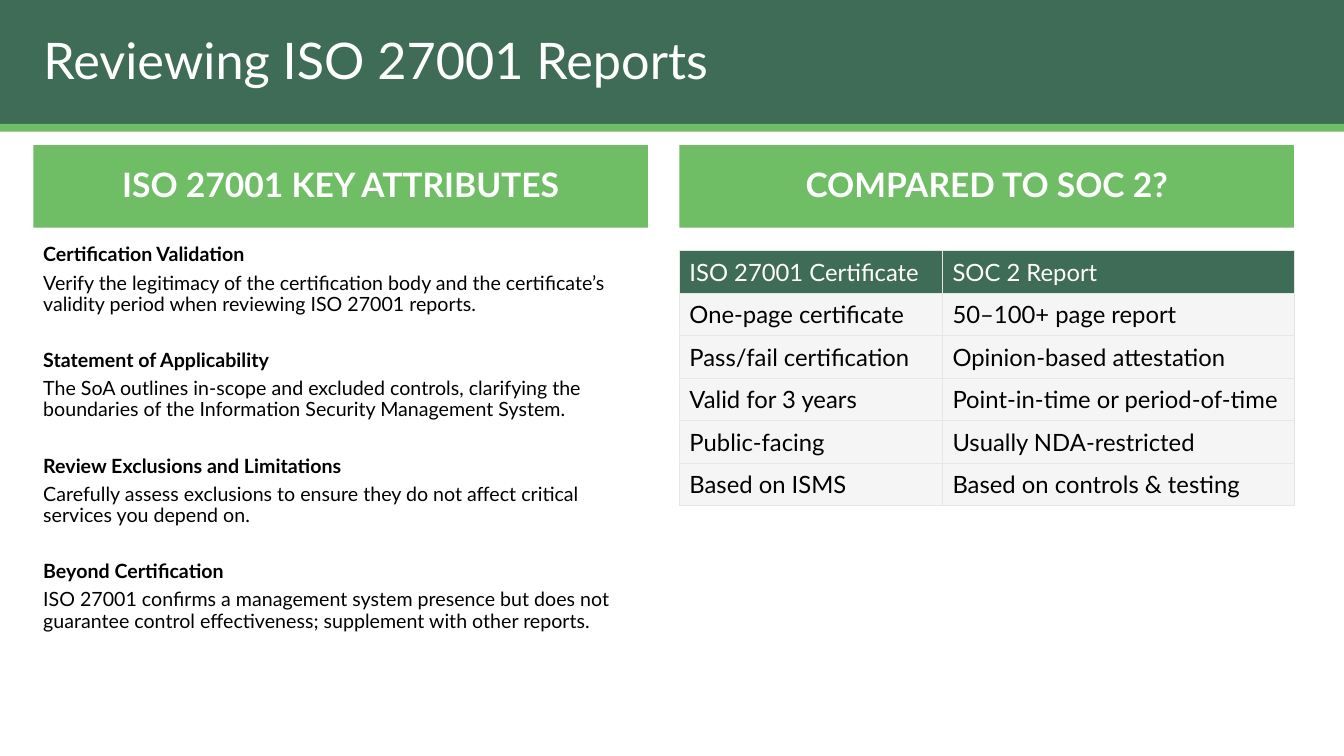
from dataclasses import dataclass
from typing import Any

from pptx import Presentation
from pptx.dml.color import RGBColor
from pptx.enum.shapes import MSO_SHAPE
from pptx.enum.text import MSO_ANCHOR, MSO_AUTO_SIZE, PP_ALIGN
from pptx.oxml import parse_xml
from pptx.oxml.ns import nsdecls
from pptx.util import Cm, Pt

DARK_GREEN = RGBColor(0x3E, 0x6C, 0x57)
LIGHT_GREEN = RGBColor(0x6F, 0xBE, 0x65)
WHITE = RGBColor(0xFF, 0xFF, 0xFF)
BLACK = RGBColor(0x00, 0x00, 0x00)
ROW_GREY = RGBColor(0xF5, 0xF5, 0xF5)
BORDER_GREY = RGBColor(0xE6, 0xE6, 0xE6)

SLIDE_W, SLIDE_H = 33.87, 19.05
LEFT_X, RIGHT_X, COLUMN_W = 0.84, 17.12, 15.49
TABLE_COLUMNS = (6.63, 8.86)
ROW_H = 1.07


@dataclass(frozen=True)
class Bar:
    x: float
    y: float
    w: float
    h: float
    color: RGBColor
    text: str = ""


@dataclass(frozen=True)
class Attribute:
    heading: str
    detail: str


BANDS = (
    Bar(0, 0, SLIDE_W, 3.18, DARK_GREEN),
    Bar(0, 3.12, SLIDE_W, 0.2, LIGHT_GREEN),
)
HEADERS = (
    Bar(LEFT_X, 3.66, COLUMN_W, 2.08, LIGHT_GREEN, "ISO 27001 KEY ATTRIBUTES"),
    Bar(RIGHT_X, 3.66, COLUMN_W, 2.08, LIGHT_GREEN, "COMPARED TO SOC 2?"),
)
ATTRIBUTES = (
    Attribute(
        "Certification Validation",
        "Verify the legitimacy of the certification body and the certificate’s "
        "validity period when reviewing ISO 27001 reports.",
    ),
    Attribute(
        "Statement of Applicability",
        "The SoA outlines in-scope and excluded controls, clarifying the "
        "boundaries of the Information Security Management System.",
    ),
    Attribute(
        "Review Exclusions and Limitations",
        "Carefully assess exclusions to ensure they do not affect critical "
        "services you depend on.",
    ),
    Attribute(
        "Beyond Certification",
        "ISO 27001 confirms a management system presence but does not "
        "guarantee control effectiveness; supplement with other reports.",
    ),
)
COMPARISON = (
    ("ISO 27001 Certificate", "SOC 2 Report"),
    ("One-page certificate", "50–100+ page report"),
    ("Pass/fail certification", "Opinion-based attestation"),
    ("Valid for 3 years", "Point-in-time or period-of-time"),
    ("Public-facing", "Usually NDA-restricted"),
    ("Based on ISMS", "Based on controls & testing"),
)


def set_attrs(target: Any, values: dict[str, Any]) -> None:
    for name, value in values.items():
        setattr(target, name, value)


def write(p: Any, text: str, size: float, color: RGBColor, bold: bool = False,
          **layout: Any) -> None:
    r = p.add_run()
    r.text = text
    set_attrs(r.font, {"name": "Lato", "size": Pt(size), "bold": bold})
    r.font.color.rgb = color
    set_attrs(p, layout)


def add_bar(s: Any, bar: Bar) -> Any:
    sp = s.shapes.add_shape(
        MSO_SHAPE.RECTANGLE, Cm(bar.x), Cm(bar.y), Cm(bar.w), Cm(bar.h))
    sp.shadow.inherit = False
    sp.fill.solid()
    sp.fill.fore_color.rgb = bar.color
    sp.line.fill.background()
    if bar.text:
        tf = sp.text_frame
        set_attrs(tf, {"word_wrap": True, "vertical_anchor": MSO_ANCHOR.MIDDLE})
        write(tf.paragraphs[0], bar.text, 24, WHITE, True,
              alignment=PP_ALIGN.CENTER, line_spacing=0.9)
    return sp


def format_title(title: Any) -> None:
    set_attrs(title, {"left": Cm(LEFT_X), "top": Cm(0.43),
                      "width": Cm(24.66), "height": Cm(2.31)})
    tf = title.text_frame
    set_attrs(tf, {"word_wrap": True, "auto_size": MSO_AUTO_SIZE.NONE,
                   "vertical_anchor": MSO_ANCHOR.MIDDLE})
    write(tf.paragraphs[0], "Reviewing ISO 27001 Reports", 36, WHITE,
          alignment=PP_ALIGN.LEFT, line_spacing=0.9)


def add_attributes(s: Any) -> None:
    sp = s.shapes.add_textbox(Cm(LEFT_X), Cm(6.05), Cm(COLUMN_W), Cm(11.1))
    tf = sp.text_frame
    tf.word_wrap = True
    for i, item in enumerate(ATTRIBUTES):
        p = tf.add_paragraph() if i else tf.paragraphs[0]
        write(p, item.heading, 14, BLACK, True,
              line_spacing=0.9, space_before=Pt(25 if i else 0))
        write(tf.add_paragraph(), item.detail, 14, BLACK,
              line_spacing=0.9, space_before=Pt(5))


def add_borders(cell: Any) -> None:
    tc_pr = cell._tc.get_or_add_tcPr()
    for side in ("lnL", "lnR", "lnT", "lnB"):
        tc_pr.append(parse_xml(
            f'<a:{side} {nsdecls("a")} w="{Pt(0.75)}"><a:solidFill>'
            f'<a:srgbClr val="{BORDER_GREY}"/></a:solidFill></a:{side}>'))


def add_comparison(s: Any) -> None:
    table = s.shapes.add_table(
        len(COMPARISON), len(TABLE_COLUMNS), Cm(RIGHT_X), Cm(6.32),
        Cm(COLUMN_W), Cm(ROW_H * len(COMPARISON))).table
    table.horz_banding = False
    for column, width in zip(table.columns, TABLE_COLUMNS):
        column.width = Cm(width)
    for i, texts in enumerate(COMPARISON):
        table.rows[i].height = Cm(ROW_H)
        for j, text in enumerate(texts):
            cell = table.cell(i, j)
            add_borders(cell)
            cell.fill.solid()
            cell.fill.fore_color.rgb = ROW_GREY if i else DARK_GREEN
            cell.vertical_anchor = MSO_ANCHOR.MIDDLE
            write(cell.text_frame.paragraphs[0], text, 17, BLACK if i else WHITE)


def main() -> None:
    prs = Presentation()
    set_attrs(prs, {"slide_width": Cm(SLIDE_W), "slide_height": Cm(SLIDE_H)})
    s = prs.slides.add_slide(prs.slide_layouts.get_by_name("Title Only"))
    title = s.shapes.title
    for band in BANDS:
        title.element.addprevious(add_bar(s, band).element)
    format_title(title)
    for header in HEADERS:
        add_bar(s, header)
    add_attributes(s)
    add_comparison(s)
    prs.save("out.pptx")


if __name__ == "__main__":
    main()
